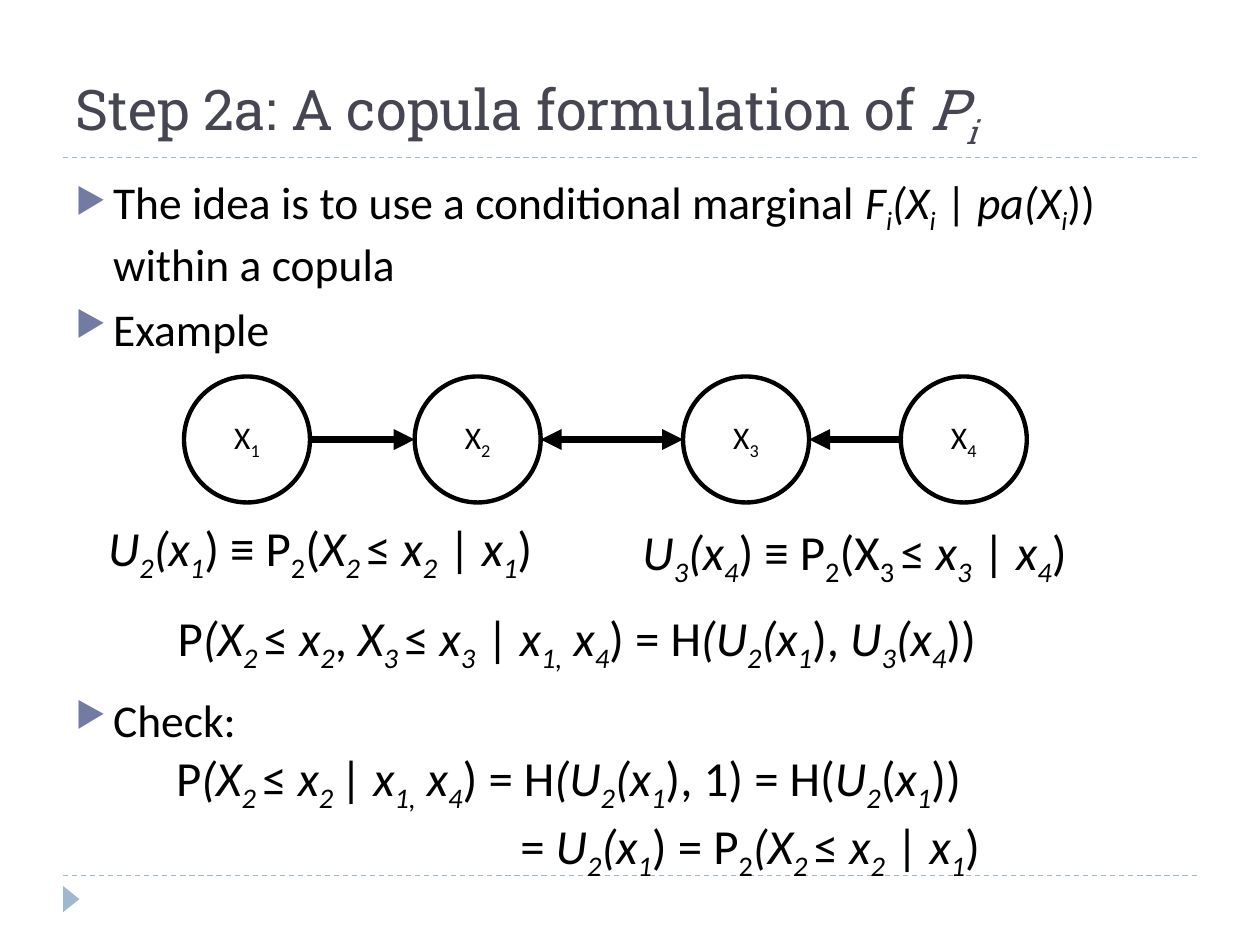
from dataclasses import dataclass

from lxml import etree
from pptx import Presentation
from pptx.dml.color import RGBColor
from pptx.enum.dml import MSO_LINE
from pptx.enum.shapes import MSO_CONNECTOR, MSO_SHAPE
from pptx.enum.text import MSO_ANCHOR, MSO_AUTO_SIZE, PP_ALIGN
from pptx.oxml.ns import qn
from pptx.util import Cm, Pt

STRAIGHT = MSO_CONNECTOR.STRAIGHT
OVAL, WEDGE = MSO_SHAPE.OVAL, MSO_SHAPE.ISOSCELES_TRIANGLE
DASH = MSO_LINE.DASH
BOTTOM, MIDDLE = MSO_ANCHOR.BOTTOM, MSO_ANCHOR.MIDDLE
LEFT, CENTER = PP_ALIGN.LEFT, PP_ALIGN.CENTER
FIXED, GROW = MSO_AUTO_SIZE.NONE, MSO_AUTO_SIZE.SHAPE_TO_FIT_TEXT


@dataclass(frozen=True)
class Theme:
    """Colours, fonts and type sizes of the slide."""
    ink: str = "000000"
    paper: str = "FFFFFF"
    head: str = "464653"
    rule: str = "9FB8CD"
    mark: str = "727CA3"
    serif: str = "Roboto Slab"
    sans: str = "Calibri"
    title: int = 32
    body: int = 26
    math: int = 28
    node: int = 18


class Deck:
    """Draws styled elements; in text, * toggles italics and {} is a subscript."""

    def __init__(self, theme):
        self.theme = theme
        self.file = Presentation()
        self.file.slide_width, self.file.slide_height = Cm(25.4), Cm(19.05)
        self.slide = self.file.slides.add_slide(self.file.slide_layouts[5])
        self.shapes = self.slide.shapes

    def piece(self, para, text, size, name, color, slant, low):
        if not text:
            return
        run = para.add_run()
        run.text = text
        font = run.font
        font.size, font.name, font.italic = Pt(size), name, slant
        font.color.rgb = RGBColor.from_string(color)
        if low:
            font._element.set("baseline", "-25000")

    def phrase(self, para, text, size, name=None, color=None):
        name, color = name or self.theme.sans, color or self.theme.ink
        slant = low = False
        part = ""
        for char in text:
            if char not in "*{}":
                part += char
                continue
            self.piece(para, part, size, name, color, slant, low)
            part = ""
            if char == "*":
                slant = not slant
            else:
                low = char == "{"
        self.piece(para, part, size, name, color, slant, low)

    def title(self, text, left, top, width, height):
        shape = self.shapes.title
        shape.left, shape.top = Cm(left), Cm(top)
        shape.width, shape.height = Cm(width), Cm(height)
        frame = shape.text_frame
        frame.vertical_anchor, frame.auto_size = BOTTOM, FIXED
        para = frame.paragraphs[0]
        para.alignment = LEFT
        self.phrase(para, text, self.theme.title, self.theme.serif, self.theme.head)

    def bullet(self, para):
        props = para._p.get_or_add_pPr()
        props.set("marL", str(Cm(0.76)))
        props.set("indent", str(-Cm(0.76)))
        tint = etree.SubElement(props, qn("a:buClr"))
        etree.SubElement(tint, qn("a:srgbClr")).set("val", self.theme.mark)
        etree.SubElement(props, qn("a:buSzPct")).set("val", "76000")
        etree.SubElement(props, qn("a:buChar")).set("char", "▶")

    def points(self, items, left, top, width, height):
        box = self.shapes.add_textbox(Cm(left), Cm(top), Cm(width), Cm(height))
        frame = box.text_frame
        frame.word_wrap = True
        for index, (text, gap) in enumerate(items):
            para = frame.add_paragraph() if index else frame.paragraphs[0]
            para.space_before = Pt(gap)
            self.bullet(para)
            self.phrase(para, text, self.theme.body)

    def math(self, text, left, top, width):
        box = self.shapes.add_textbox(Cm(left), Cm(top), Cm(width), Cm(1.45))
        frame = box.text_frame
        frame.word_wrap, frame.auto_size = False, GROW
        self.phrase(frame.paragraphs[0], text, self.theme.math)

    def shape(self, kind, left, top, width, height, fill):
        shape = self.shapes.add_shape(kind, Cm(left), Cm(top), Cm(width), Cm(height))
        shape.shadow.inherit = False
        shape.fill.solid()
        shape.fill.fore_color.rgb = RGBColor.from_string(fill)
        return shape

    def node(self, text, left, top, size):
        shape = self.shape(OVAL, left, top, size, size, self.theme.paper)
        shape.line.color.rgb = RGBColor.from_string(self.theme.ink)
        shape.line.width = Pt(2.5)
        frame = shape.text_frame
        frame.vertical_anchor = MIDDLE
        para = frame.paragraphs[0]
        para.alignment = CENTER
        self.phrase(para, text, self.theme.node)

    def wedge(self, left, top, width, height):
        shape = self.shape(WEDGE, left, top, width, height, self.theme.rule)
        shape.line.fill.background()
        shape.rotation = 90

    def line(self, start, end, level, color, weight):
        line = self.shapes.add_connector(
            STRAIGHT, Cm(start), Cm(level), Cm(end), Cm(level))
        line.line.color.rgb = RGBColor.from_string(color)
        line.line.width = Pt(weight)
        etree.SubElement(line._element.spPr, qn("a:effectLst"))
        return line.line

    def rule(self, level):
        self.line(1.27, 24.13, level, self.theme.rule, 0.75).dash_style = DASH

    def arrow(self, start, end, level):
        line = self.line(start, end, level, self.theme.ink, 4)
        tip = etree.SubElement(line._get_or_add_ln(), qn("a:tailEnd"))
        tip.set("type", "triangle")


def main():
    deck = Deck(Theme())
    for level in (17.65, 3.18):
        deck.rule(level)
    deck.wedge(1.17, 17.96, 0.53, 0.33)
    deck.title("Step 2a: A copula formulation of *P{i}*", 1.27, 0.43, 22.86, 2.74)
    deck.points([
        ("The idea is to use a conditional marginal "
         "*F{i}(X{i}* | *pa(X{i}*)) within a copula", 6),
        ("Example", 6),
        ("Check:", 192),
    ], 1.27, 3.38, 22.86, 13.72)

    size, top = 2.54, 7.59
    lefts = (3.71, 8.36, 13.77, 18.16)
    for index, left in enumerate(lefts, 1):
        deck.node(f"X{{{index}}}", left, top, size)
    one, two, three, four = lefts
    for start, end in ((one + size, two), (12.9, two + size),
                       (11.63, three), (four, three + size)):
        deck.arrow(start, end, top + size / 2)

    for text, left, top, width in (
        ("*U{2}(x{1}*) ≡ P{2}(*X{2 }*≤ *x{2}* | *x{1}*)", 1.93, 10.31, 9.96),
        ("*U{3}(x{4}*) ≡ P{2}(X{3 }≤ *x{3}* | *x{4}*)", 12.7, 10.39, 9.96),
        ("P*(X{2 }*≤ *x{2}*, *X{3 }*≤ *x{3}* | *x{1,} x{4}*) = "
         "H*(U{2}(x{1}*), *U{3}(x{4}*))", 3.33, 12.12, 18.16),
        ("P*(X{2 }*≤ *x{2 }*| *x{1,} x{4}*) = "
         "H*(U{2}(x{1}*), 1) = H(*U{2}*(*x{1}*))", 3.3, 14.94, 18.29),
        ("= *U{2}(x{1}*) = P{2}*(X{2 }*≤ *x{2}* | *x{1}*)", 10.24, 16.31, 11.07),
    ):
        deck.math(text, left, top, width)
    deck.file.save("out.pptx")


if __name__ == "__main__":
    main()
